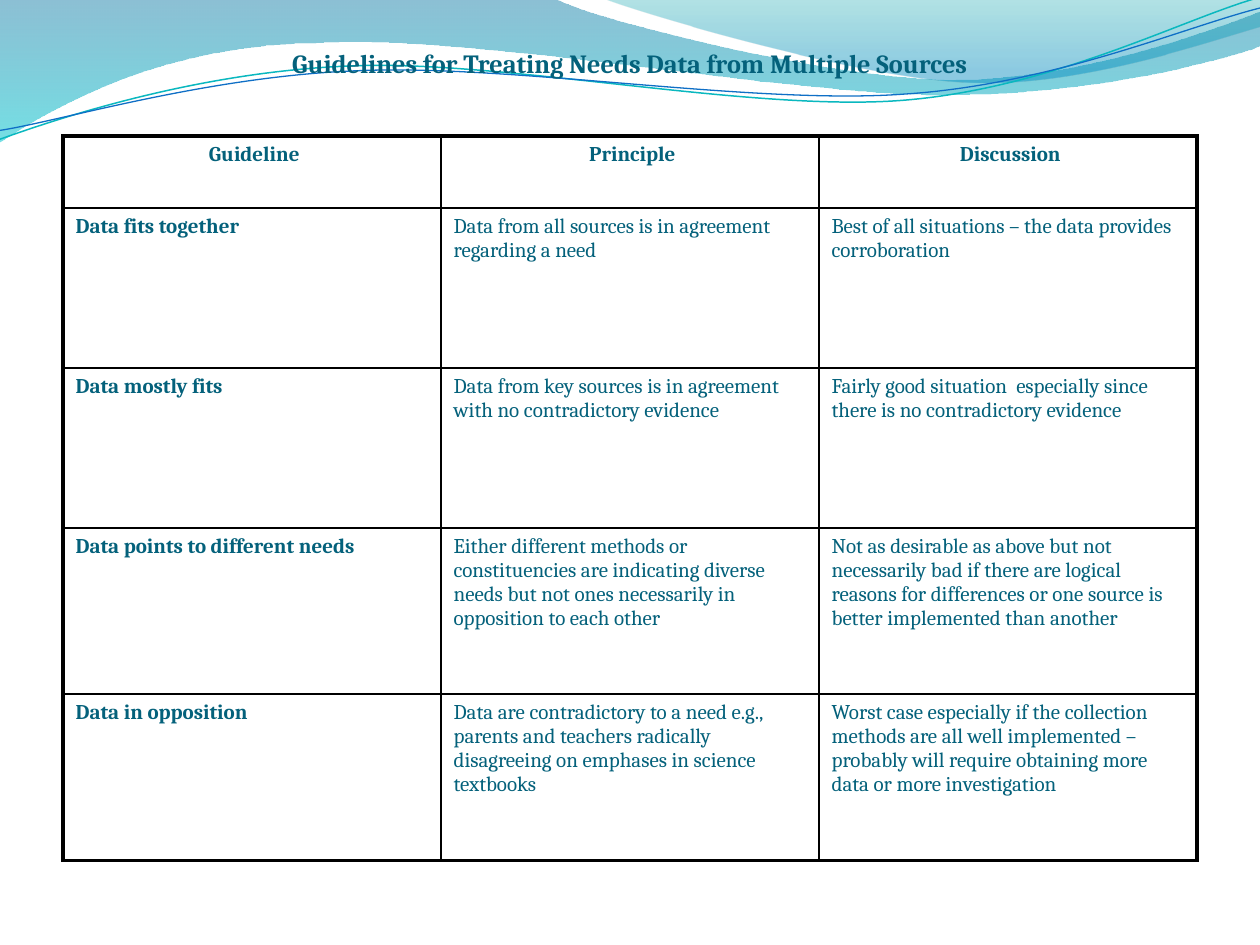
"""Builds the slide on guidelines for treating needs data from multiple sources."""
from dataclasses import dataclass

from lxml import etree
from pptx import Presentation
from pptx import util as u
from pptx.dml.color import RGBColor
from pptx.enum import text
from pptx.oxml import ns


@dataclass(frozen=True)
class Theme:
    ink: str = "04617B"
    border: str = "000000"
    teal: str = "0AB8BF"
    blue: str = "0F6FC6"
    left_wave: tuple = (("0074A1", 0, 45), ("00C6CF", 1, 55))
    right_wave: tuple = (("00A1A9", 0, 30), ("008BBF", 0.8, 45))
    font: str = "Cambria"
    title_size: int = 15
    cell_size: int = 12
    outer_line: float = 2.25
    inner_line: float = 1


theme = Theme()


def trace_wave(shapes, start, segments, close):
    """Draw a freeform from straight (x, y) and cubic (six-number) segments."""
    builder = shapes.build_freeform(u.Inches(start[0]), u.Inches(start[1]))
    builder.add_line_segments(
        [(u.Inches(x), u.Inches(y)) for segment in segments
         for x, y in zip(segment[::2], segment[1::2])], close=close)
    wave = builder.convert_to_shape()
    wave.shadow.inherit = False
    steps = iter(list(wave.element.iter(ns.qn("a:lnTo"))))
    for segment in segments:
        step = next(steps)
        if len(segment) == 6:
            curve = etree.Element(ns.qn("a:cubicBezTo"))
            step.addprevious(curve)
            for control in (step, next(steps), next(steps)):
                curve.append(control[0])
                control.getparent().remove(control)
    return wave


def add_run(paragraph, words, size, bold):
    """Append one run in the slide's typeface and ink."""
    run = paragraph.add_run()
    run.text = words
    run.font.name = theme.font
    run.font.size = u.Pt(size)
    run.font.bold = bold
    run.font.color.rgb = RGBColor.from_string(theme.ink)


prs = Presentation()
prs.slide_width, prs.slide_height = u.Inches(10), u.Inches(7.5)
slide = prs.slides.add_slide(prs.slide_layouts[5])

filled_waves = [
    (theme.left_wave, (0, -0.01), [
        (4.4, -0.01), (4.76, 0.17, 6.64, 0.63, 7.58, 0.63),
        (8.53, 0.63, 9.58, 0.26, 10, 0.09), (10.01, 0.36),
        (9.83, 0.44, 8.7, 0.76, 7.46, 0.75), (6.22, 0.75, 3.82, 0.28, 2.57, 0.34),
        (1.29, 0.35, 0.46, 0.83, -0.01, 1.13)]),
    (theme.right_wave, (4.79, -0.01), [
        (5.09, 0.11, 6.82, 0.62, 7.69, 0.65), (8.56, 0.69, 9.61, 0.32, 10, 0.21),
        (10, 0)]),
]
for stops, start, segments in filled_waves:
    wave = trace_wave(slide.shapes, start, segments, True)
    wave.line.fill.background()
    wave.fill.gradient()
    wave.fill.gradient_angle = 270
    for stop, (color, position, opacity) in zip(wave.fill.gradient_stops, stops):
        stop.color.rgb = RGBColor.from_string(color)
        stop.position = position
    for tint, (color, position, opacity) in zip(
            wave.element.spPr.iter(ns.qn("a:srgbClr")), stops):
        etree.SubElement(tint, ns.qn("a:alpha"), val=str(opacity * 1000))

line_waves = [
    (theme.teal, 0.85, (-0.02, 0.87), [
        (0.47, 0.72, 1.58, 0.41, 2.78, 0.42), (3.96, 0.42, 5.91, 0.93, 7.12, 0.9),
        (8.32, 0.87, 9.4, 0.36, 10, 0.22)]),
    (theme.blue, 0.75, (-0.02, 0.8), [
        (0.46, 0.75, 1.64, 0.45, 2.83, 0.46), (4.04, 0.46, 5.96, 0.88, 7.16, 0.85),
        (8.35, 0.83, 9.42, 0.42, 10.02, 0.3)]),
]
for color, width, start, segments in line_waves:
    wave = trace_wave(slide.shapes, start, segments, False)
    wave.rotation = 357.3
    wave.fill.background()
    wave.line.color.rgb = RGBColor.from_string(color)
    wave.line.width = u.Pt(width)

title = slide.shapes.title
title.element.getparent().append(title.element)
title.left, title.top = u.Inches(0.33), u.Inches(0.17)
title.width, title.height = u.Inches(9.34), u.Inches(0.92)
title_frame = title.text_frame
title_frame.word_wrap = True
title_frame.auto_size = text.MSO_AUTO_SIZE.NONE
title_frame.vertical_anchor = text.MSO_ANCHOR.TOP
title_frame.margin_top = u.Inches(0.25)
heading = title_frame.paragraphs[0]
heading.alignment = text.PP_ALIGN.CENTER
heading.line_spacing = 0.8
add_run(heading, "Guidelines for Treating Needs Data from Multiple Sources",
        theme.title_size, True)

guidelines = [
    (" Guideline", " Principle", " Discussion"),
    ("Data fits together",
     "Data from all sources is in agreement regarding a need",
     "Best of all situations – the data provides corroboration"),
    ("Data mostly fits",
     "Data from key sources is in agreement with no contradictory evidence",
     "Fairly good situation  especially since there is no contradictory evidence"),
    ("Data points to different needs",
     "Either different methods or  constituencies are indicating diverse needs "
     "but not ones necessarily in opposition to each other",
     "Not as desirable as above but not necessarily bad if there are logical "
     "reasons for differences or one source is better implemented than another"),
    ("Data in opposition",
     "Data are contradictory to a need e.g., parents and teachers radically "
     "disagreeing on emphases in science textbooks",
     "Worst case especially if the collection methods are all well implemented – "
     "probably will require obtaining more data or more investigation"),
]
row_heights = [0.57, 1.27, 1.27, 1.32, 1.32]
last_row, last_col = len(guidelines) - 1, len(guidelines[0]) - 1
grid = slide.shapes.add_table(last_row + 1, last_col + 1, u.Inches(0.5), u.Inches(1.08),
                              u.Inches(9), u.Inches(sum(row_heights))).table
grid.first_row = grid.horz_banding = False

for r, (height, guideline) in enumerate(zip(row_heights, guidelines)):
    grid.rows[r].height = u.Inches(height)
    for c, words in enumerate(guideline):
        cell = grid.cell(r, c)
        cell.fill.background()
        paragraph = cell.text_frame.paragraphs[0]
        paragraph.alignment = text.PP_ALIGN.CENTER if r == 0 else text.PP_ALIGN.LEFT
        add_run(paragraph, words, theme.cell_size, r == 0 or c == 0)
        outer_edges = {"L": c == 0, "R": c == last_col, "T": r == 0, "B": r == last_row}
        properties = cell._tc.get_or_add_tcPr()
        for index, (side, is_outer) in enumerate(outer_edges.items()):
            width = theme.outer_line if is_outer else theme.inner_line
            edge = etree.Element(ns.qn(f"a:ln{side}"), w=str(u.Pt(width)))
            solid = etree.SubElement(edge, ns.qn("a:solidFill"))
            etree.SubElement(solid, ns.qn("a:srgbClr"), val=theme.border)
            properties.insert(index, edge)

prs.save("out.pptx")
